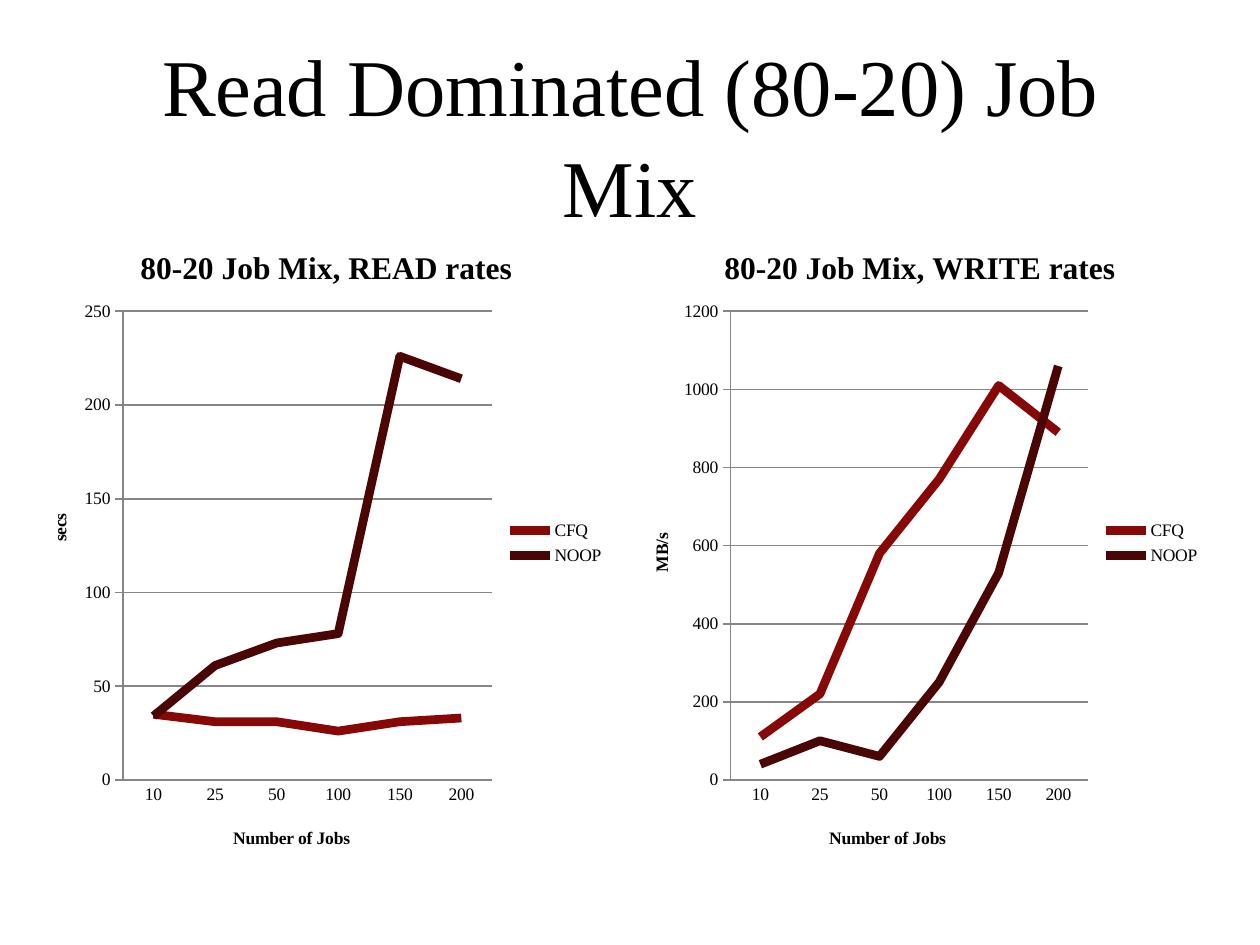
from lxml import etree
from pptx import Presentation
from pptx.chart.data import CategoryChartData
from pptx.dml.color import RGBColor
from pptx.enum.chart import XL_CHART_TYPE, XL_LEGEND_POSITION, XL_TICK_MARK
from pptx.enum.text import MSO_ANCHOR, PP_ALIGN
from pptx.oxml.ns import qn
from pptx.util import Pt

BLACK = RGBColor(0x00, 0x00, 0x00)
GRAY = RGBColor(0x86, 0x86, 0x86)
RED = RGBColor(0x86, 0x09, 0x08)
DARK_RED = RGBColor(0x4A, 0x05, 0x05)
FONT = "Times New Roman"
LINE = XL_CHART_TYPE.LINE
RIGHT = XL_LEGEND_POSITION.RIGHT
NO_TICK, TICK_OUT = XL_TICK_MARK.NONE, XL_TICK_MARK.OUTSIDE
CENTER, MIDDLE = PP_ALIGN.CENTER, MSO_ANCHOR.MIDDLE

JOBS = ["10", "25", "50", "100", "150", "200"]
READ = {"CFQ": [35, 31, 31, 26, 31, 33], "NOOP": [34, 61, 73, 78, 226, 214]}
WRITE = {"CFQ": [110, 220, 580, 770, 1010, 890],
         "NOOP": [40, 100, 60, 250, 530, 1060]}


def set_font(font, size, bold=False):
    font.name, font.size, font.bold = FONT, Pt(size), bold
    font.color.rgb = BLACK


def write_text(tf, text, size=10, bold=False, align=CENTER, spacing=None):
    p = tf.paragraphs[0]
    p.alignment = align
    p.line_spacing = spacing
    r = p.add_run()
    r.text = text
    set_font(r.font, size, bold)


def set_layout(element, **values):
    for old in element.findall(qn("c:layout")):
        element.remove(old)
    layout = etree.Element(qn("c:layout"))
    manual = etree.SubElement(layout, qn("c:manualLayout"))
    if "w" in values:
        etree.SubElement(manual, qn("c:layoutTarget"), val="inner")
    for key in ("xMode", "yMode"):
        etree.SubElement(manual, qn("c:" + key), val="edge")
    for key, value in values.items():
        etree.SubElement(manual, qn("c:" + key), val=str(value))
    element.insert(0 if element.find(qn("c:tx")) is None else 1, layout)


def add_title(slide, left, top, width, height, text):
    s = slide.shapes.add_textbox(Pt(left), Pt(top), Pt(width), Pt(height))
    tf = s.text_frame
    tf.word_wrap = True
    tf.vertical_anchor = MIDDLE
    write_text(tf, text, size=46, spacing=1.04)


def format_axis(axis, title, x, y, tick):
    write_text(axis.axis_title.text_frame, title, bold=True)
    set_layout(axis.axis_title.element, x=x, y=y)
    axis.major_tick_mark = tick
    axis.minor_tick_mark = NO_TICK
    axis.format.line.color.rgb = GRAY
    axis.format.line.width = Pt(1)
    set_font(axis.tick_labels.font, 10)


def add_rate_chart(slide, left, top, width, height, title, title_x, series,
                   unit, unit_x, unit_y, maximum, step, plot_x, plot_w):
    data = CategoryChartData()
    data.categories = JOBS
    for name, values in series.items():
        data.add_series(name, values)
    chart = slide.shapes.add_chart(
        LINE, Pt(left), Pt(top), Pt(width), Pt(height), data).chart
    set_font(chart.font, 10)
    write_text(chart.chart_title.text_frame, title, size=18, bold=True)
    chart.chart_title.include_in_layout = False
    set_layout(chart.chart_title.element, x=title_x, y=0.04)

    format_axis(chart.category_axis, "Number of Jobs", 0.35, 0.93, NO_TICK)
    axis = chart.value_axis
    format_axis(axis, unit, unit_x, unit_y, TICK_OUT)
    axis.minimum_scale, axis.maximum_scale, axis.major_unit = 0, maximum, step
    axis.has_major_gridlines = True
    axis.major_gridlines.format.line.color.rgb = GRAY
    axis.major_gridlines.format.line.width = Pt(1)

    chart.has_legend = True
    chart.legend.position = RIGHT
    chart.legend.include_in_layout = False
    set_font(chart.legend.font, 10)

    plot = chart.plots[0]
    plot.vary_by_categories = False
    for line, color in zip(plot.series, (RED, DARK_RED)):
        line.smooth = False
        line.format.line.color.rgb = color
        line.format.line.width = Pt(5)
    area = chart.element.find(".//" + qn("c:plotArea"))
    set_layout(area, x=plot_x, y=0.145, w=plot_w, h=0.718)


def main():
    prs = Presentation()
    prs.slide_width, prs.slide_height = Pt(720), Pt(540)
    slide = prs.slides.add_slide(prs.slide_layouts[6])
    add_title(slide, 72, 42, 576, 68, "Read Dominated (80-20) Job Mix")
    left, top, width, height = 12.24, 123.84, 340.56, 372.96
    add_rate_chart(slide, left, top, width, height,
                   "80-20 Job Mix, READ rates", 0.19, READ,
                   "secs", 0.04, 0.45, 250, 50, 0.17, 0.62)
    add_rate_chart(slide, left + width, top, width, height,
                   "80-20 Job Mix, WRITE rates", 0.17, WRITE,
                   "MB/s", 0.05, 0.48, 1200, 200, 0.19, 0.6)
    prs.save("out.pptx")


if __name__ == "__main__":
    main()
